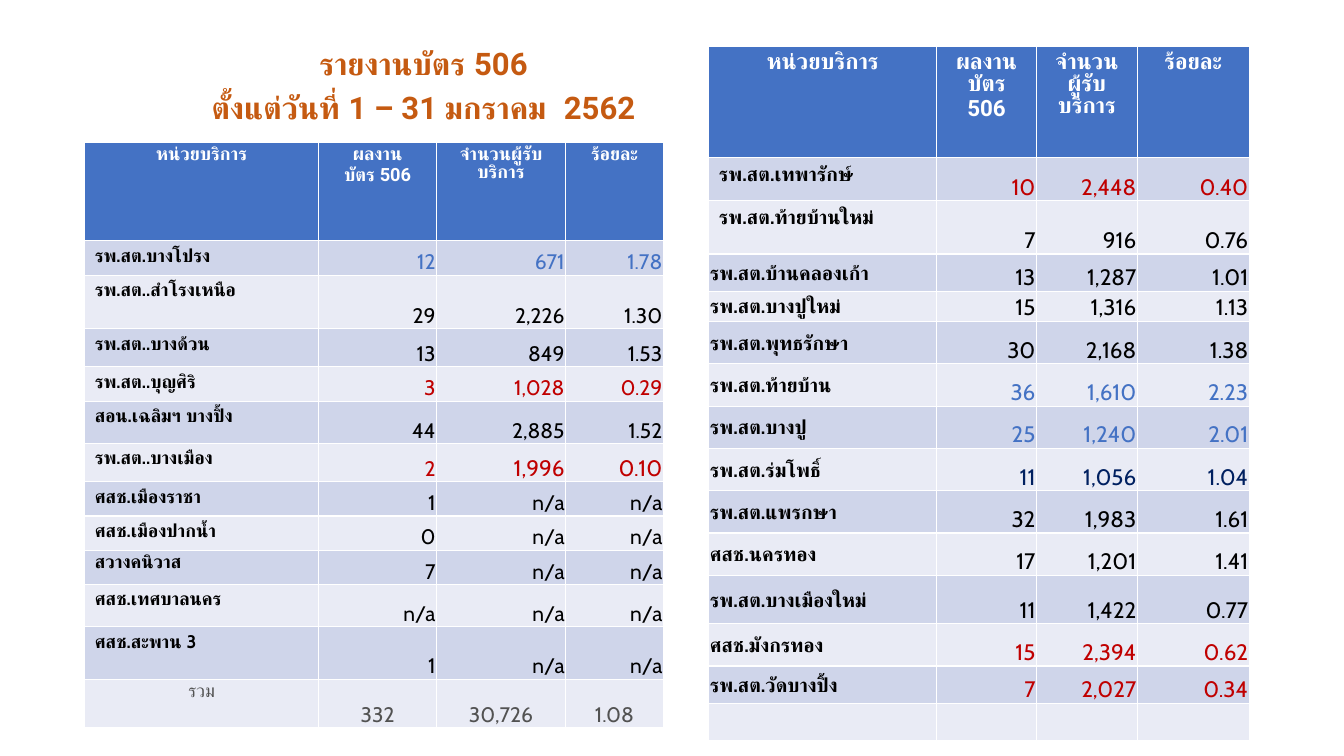
from typing import NamedTuple

from pptx import Presentation
from pptx.dml.color import RGBColor
from pptx.enum.text import MSO_ANCHOR, PP_ALIGN
from pptx.util import Inches, Pt

WHITE = RGBColor(0xFF, 0xFF, 0xFF)
BLACK = RGBColor(0x00, 0x00, 0x00)
ORANGE = RGBColor(0xC5, 0x5A, 0x11)
BLUE = RGBColor(0x44, 0x72, 0xC4)
NAVY = RGBColor(0x00, 0x20, 0x60)
RED = RGBColor(0xC0, 0x00, 0x00)
GREY = RGBColor(0x52, 0x52, 0x52)
BANDS = (RGBColor(0xCF, 0xD5, 0xEA), RGBColor(0xE9, 0xEB, 0xF5))

HEADING_FONT = "Roboto"
BODY_FONT = "Cabin"
TIGHT = (0.01, 0.01, 0.01, 0)

TITLE = ("รายงานบัตร 506", "ตั้งแต่วันที่ 1 – 31 มกราคม  2562")


class Unit(NamedTuple):
    """One service unit: its row height in inches, name, figures and their colour."""
    height: float
    name: str
    figures: tuple = ("", "", "")
    color: RGBColor = BLACK


class Report(NamedTuple):
    """A table: place and columns in inches, text sizes in points, and its rows."""
    left: float
    top: float
    columns: tuple
    header_height: float
    headers: tuple
    header_size: int
    name_size: int
    figure_size: int
    padding: tuple
    padded_rows: int
    units: tuple


LEFT_REPORT = Report(
    0.84, 1.41, (2.32, 1.17, 1.28, 0.97), 0.98,
    ("หน่วยบริการ", "ผลงาน\nบัตร 506", "จำนวนผู้รับ\nบริการ", "ร้อยละ"),
    13, 13, 15, (0.1, 0.04, 0.1, 0.04), 12,
    (
        Unit(0.34, "รพ.สต.บางโปรง", ("12", "671", "1.78"), BLUE),
        Unit(0.53, "รพ.สต..สำโรงเหนือ", ("29", "2,226", "1.30")),
        Unit(0.38, "รพ.สต..บางด้วน", ("13", "849", "1.53")),
        Unit(0.34, "รพ.สต..บุญศิริ", ("3", "1,028", "0.29"), RED),
        Unit(0.42, "สอน.เฉลิมฯ บางปิ้ง", ("44", "2,885", "1.52")),
        Unit(0.38, "รพ.สต..บางเมือง", ("2", "1,996", "0.10"), RED),
        Unit(0.34, "ศสช.เมืองราชา", ("1", "n/a", "n/a")),
        Unit(0.34, "ศสช.เมืองปากน้ำ", ("0", "n/a", "n/a")),
        Unit(0.34, "สวางคนิวาส", ("7", "n/a", "n/a")),
        Unit(0.42, "ศสช.เทศบาลนคร", ("n/a", "n/a", "n/a")),
        Unit(0.52, "ศสช.สะพาน 3", ("1", "n/a", "n/a")),
        Unit(0.48, "รวม", ("332", "30,726", "1.08"), GREY),
    ),
)

RIGHT_REPORT = Report(
    7.03, 0.46, (2.26, 0.99, 1, 1.11), 1.1,
    ("หน่วยบริการ", "ผลงานบัตร\n506", "จำนวนผู้รับ\nบริการ", "ร้อยละ"),
    16, 14, 16, (0.1, 0.05, 0.1, 0.05), 2,
    (
        Unit(0.43, "รพ.สต.เทพารักษ์", ("10", "2,448", "0.40"), RED),
        Unit(0.53, "รพ.สต.ท้ายบ้านใหม่", ("7", "916", "0.76")),
        Unit(0.37, "รพ.สต.บ้านคลองเก้า", ("13", "1,287", "1.01")),
        Unit(0.3, "รพ.สต.บางปูใหม่", ("15", "1,316", "1.13")),
        Unit(0.42, "รพ.สต.พุทธรักษา", ("30", "2,168", "1.38")),
        Unit(0.42, "รพ.สต.ท้ายบ้าน", ("36", "1,610", "2.23"), BLUE),
        Unit(0.42, "รพ.สต.บางปู", ("25", "1,240", "2.01"), BLUE),
        Unit(0.42, "รพ.สต.ร่มโพธิ์", ("11", "1,056", "1.04"), NAVY),
        Unit(0.42, "รพ.สต.แพรกษา", ("32", "1,983", "1.61")),
        Unit(0.42, "ศสช.นครทอง", ("17", "1,201", "1.41")),
        Unit(0.48, "รพ.สต.บางเมืองใหม่", ("11", "1,422", "0.77")),
        Unit(0.42, "ศสช.มังกรทอง", ("15", "2,394", "0.62"), RED),
        Unit(0.37, "รพ.สต.วัดบางปิ้ง", ("7", "2,027", "0.34"), RED),
        Unit(0.37, ""),
    ),
)


def style_paragraph(paragraph, font_name, size, color, bold, alignment):
    paragraph.alignment = alignment
    font = paragraph.font
    font.name, font.size, font.bold = font_name, Pt(size), bold
    font.color.rgb = color


def fill_cell(cell, text, fill, margins, anchor, *style):
    cell.fill.solid()
    cell.fill.fore_color.rgb = fill
    (cell.margin_left, cell.margin_top,
     cell.margin_right, cell.margin_bottom) = map(Inches, margins)
    cell.vertical_anchor = anchor
    cell.text = text
    for paragraph in cell.text_frame.paragraphs:
        style_paragraph(paragraph, *style)


def add_title(slide):
    box = slide.shapes.add_textbox(Inches(1.5), Inches(0.46), Inches(5.31), Inches(0.86))
    frame = box.text_frame
    frame.word_wrap = True
    frame.text = "\n".join(TITLE)
    for index, paragraph in enumerate(frame.paragraphs):
        properties = paragraph._p.get_or_add_pPr()
        properties.set("marL", str(Inches(0.4)))
        properties.set("indent", str(Inches(-0.31)))
        paragraph.line_spacing = 0.8
        paragraph.space_before = Pt(10 if index else 0)
        style_paragraph(paragraph, HEADING_FONT, 22.2, ORANGE, True, PP_ALIGN.CENTER)


def add_report(slide, report):
    heights = [report.header_height] + [unit.height for unit in report.units]
    table = slide.shapes.add_table(
        len(heights), len(report.columns), Inches(report.left), Inches(report.top),
        Inches(sum(report.columns)), Inches(sum(heights))).table
    for column, width in zip(table.columns, report.columns):
        column.width = Inches(width)
    for row, height in zip(table.rows, heights):
        row.height = Inches(height)

    for column, header in enumerate(report.headers):
        fill_cell(table.cell(0, column), header, BLUE, report.padding, MSO_ANCHOR.TOP,
                  HEADING_FONT, report.header_size, WHITE, True, PP_ALIGN.CENTER)

    for row, unit in enumerate(report.units, start=1):
        band = BANDS[(row - 1) % 2]
        is_total = unit.color == GREY
        padded = row <= report.padded_rows
        fill_cell(table.cell(row, 0), unit.name, band,
                  report.padding if padded else TIGHT,
                  MSO_ANCHOR.TOP if padded else MSO_ANCHOR.MIDDLE,
                  BODY_FONT, report.name_size, GREY if is_total else BLACK,
                  not is_total, PP_ALIGN.CENTER if is_total else PP_ALIGN.LEFT)
        for column, figure in enumerate(unit.figures, start=1):
            fill_cell(table.cell(row, column), figure, band, TIGHT, MSO_ANCHOR.BOTTOM,
                      BODY_FONT, report.figure_size, unit.color, False,
                      PP_ALIGN.CENTER if is_total else PP_ALIGN.RIGHT)
    return table


def main():
    presentation = Presentation()
    presentation.slide_width = Inches(13.33)
    presentation.slide_height = Inches(7.5)
    slide = presentation.slides.add_slide(presentation.slide_layouts[6])
    add_title(slide)
    add_report(slide, RIGHT_REPORT)
    left_table = add_report(slide, LEFT_REPORT)
    for column in (2, 3):
        left_table.cell(6, column).text_frame.paragraphs[0].font.size = Pt(16)
    presentation.save("out.pptx")


if __name__ == "__main__":
    main()
